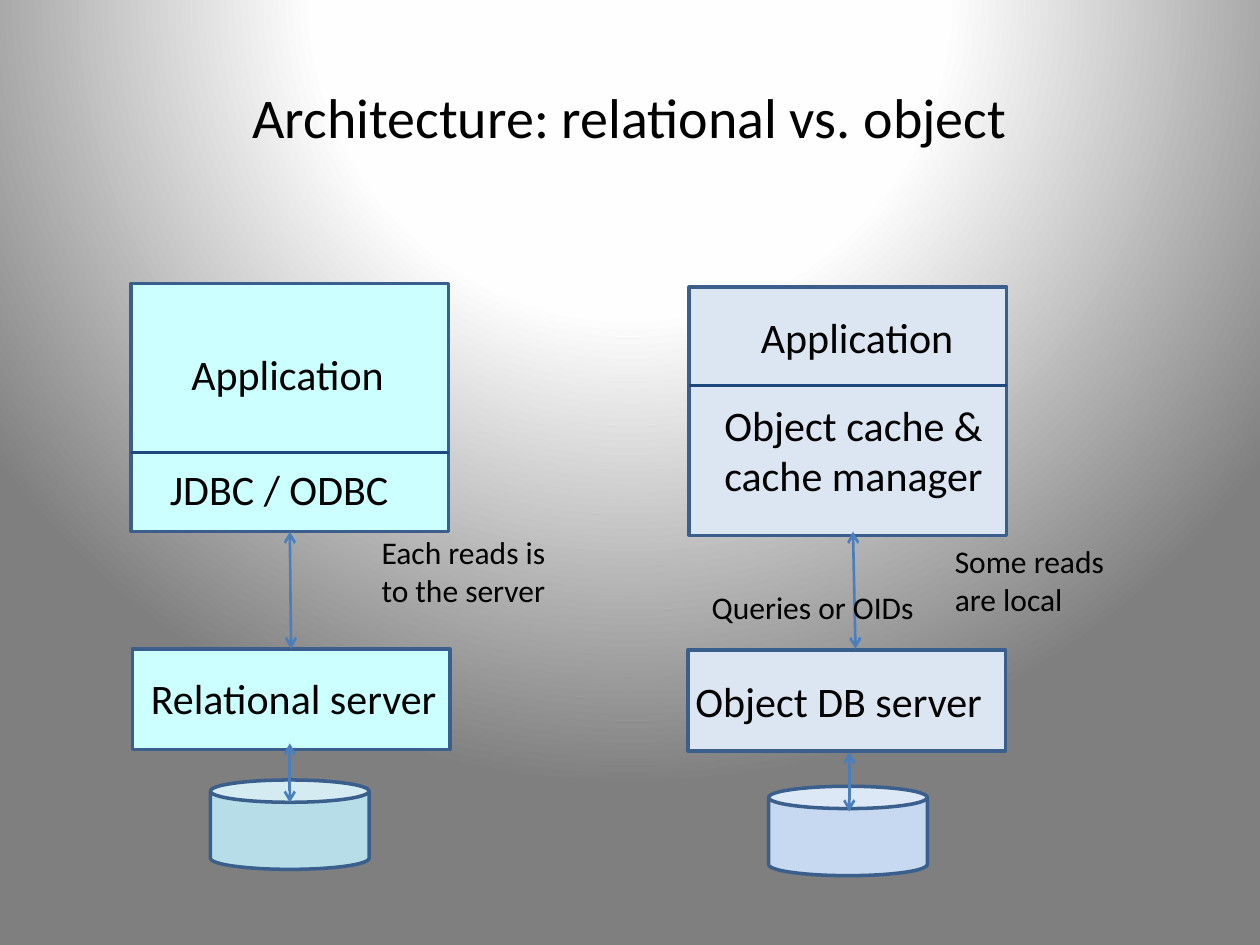
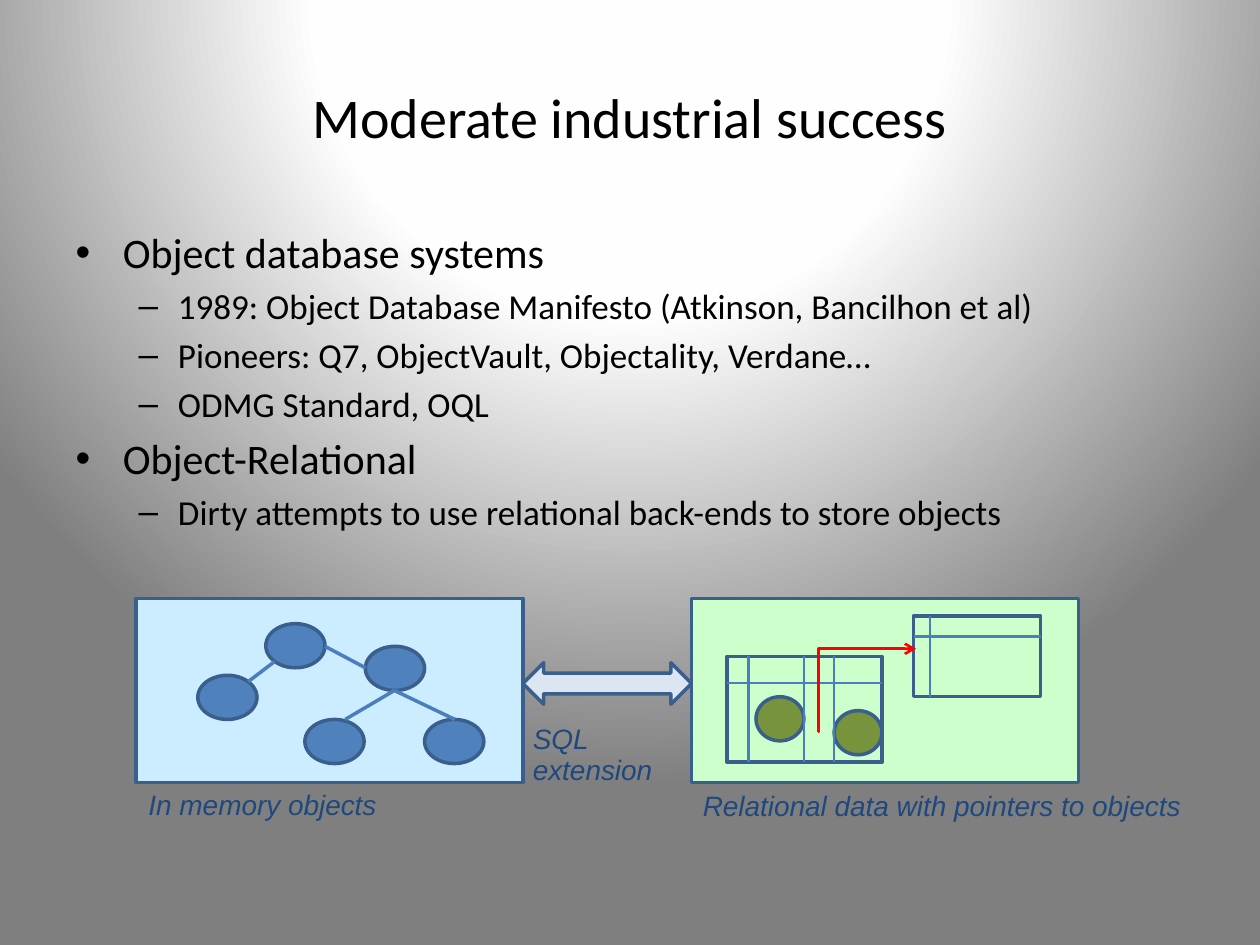
from lxml import etree
from pptx import Presentation
from pptx.dml.color import RGBColor
from pptx.enum.shapes import MSO_CONNECTOR, MSO_SHAPE
from pptx.enum.text import MSO_ANCHOR, PP_ALIGN
from pptx.oxml import parse_xml
from pptx.oxml.ns import qn
from pptx.util import Inches, Pt

RECT, OVAL, CAN = MSO_SHAPE.RECTANGLE, MSO_SHAPE.OVAL, MSO_SHAPE.CAN
DOUBLE_ARROW = MSO_SHAPE.LEFT_RIGHT_ARROW
STRAIGHT, ELBOW = MSO_CONNECTOR.STRAIGHT, MSO_CONNECTOR.ELBOW
CENTER, MIDDLE = PP_ALIGN.CENTER, MSO_ANCHOR.MIDDLE
TITLE_ONLY, TITLE_AND_BODY = 5, 1

BLACK = RGBColor(0x00, 0x00, 0x00)
NAVY = RGBColor(0x1F, 0x49, 0x7D)
OUTLINE = RGBColor(0x3A, 0x5F, 0x8C)
LINK = RGBColor(0x4B, 0x7E, 0xBC)
BLUE = RGBColor(0x4F, 0x81, 0xBD)
PALE_BLUE = RGBColor(0xDC, 0xE6, 0xF2)
CAN_BLUE = RGBColor(0xC6, 0xD9, 0xF1)
CYAN = RGBColor(0xCC, 0xFF, 0xFF)
CAN_CYAN = RGBColor(0xB7, 0xDE, 0xE8)
SKY = RGBColor(0xCC, 0xEC, 0xFF)
MINT = RGBColor(0xCC, 0xFF, 0xCC)
OLIVE = RGBColor(0x77, 0x93, 0x3C)
RED = RGBColor(0xFF, 0x00, 0x00)

BODY_SIZES = (24, 20)
NS = ('xmlns:a="http://schemas.openxmlformats.org/drawingml/2006/main" '
      'xmlns:p="http://schemas.openxmlformats.org/presentationml/2006/main"')
BACKGROUND = f"""<p:bg {NS}><p:bgPr><a:gradFill rotWithShape="1"><a:gsLst>
<a:gs pos="0"><a:srgbClr val="FFFFFF"/></a:gs>
<a:gs pos="40000"><a:srgbClr val="FEFEFE"/></a:gs>
<a:gs pos="100000"><a:srgbClr val="7F7F7F"/></a:gs></a:gsLst>
<a:path path="circle"><a:fillToRect l="50000" t="-80000" r="50000" b="180000"/></a:path>
</a:gradFill><a:effectLst/></p:bgPr></p:bg>"""


class Deck:
    def __init__(self):
        self.prs = Presentation()
        self.prs.slide_width, self.prs.slide_height = Inches(10), Inches(7.5)
        self.s = None
        c_sld = self.prs.slide_master.element.find(qn("p:cSld"))
        for old in c_sld.findall(qn("p:bg")):
            c_sld.remove(old)
        c_sld.insert(0, parse_xml(BACKGROUND))

    def slide(self, layout, title):
        """Start a slide with its title."""
        self.s = self.prs.slides.add_slide(self.prs.slide_layouts[layout])
        sp = self.s.shapes.title
        self.place(sp, 0.5, 0.3, 9, 1.25)
        sp.text_frame.text = title
        sp.text_frame.vertical_anchor = MIDDLE
        p = sp.text_frame.paragraphs[0]
        p.alignment = CENTER
        self.font(p, 32)

    @staticmethod
    def place(sp, x, y, w, h):
        sp.left, sp.top, sp.width, sp.height = map(Inches, (x, y, w, h))

    @staticmethod
    def font(p, size, color=BLACK, name="Calibri", italic=False):
        p.font.size, p.font.name, p.font.italic = Pt(size), name, italic
        p.font.color.rgb = color

    def body(self, items):
        """Fill the body placeholder from (level, text) pairs."""
        sp = self.s.placeholders[1]
        self.place(sp, 0.5, 1.75, 9, 4.95)
        tf = sp.text_frame
        tf.text = "\n".join(text for _, text in items)
        for p, (level, _) in zip(tf.paragraphs, items):
            p.level = level
            self.font(p, BODY_SIZES[level])

    def text(self, x, y, w, h, text, size=24, wrap=False):
        sp = self.s.shapes.add_textbox(*map(Inches, (x, y, w, h)))
        tf = sp.text_frame
        tf.word_wrap = wrap
        tf.text = text
        for p in tf.paragraphs:
            self.font(p, size)
        return sp

    def caption(self, x, y, w, h, text):
        sp = self.text(x, y, w, h, text)
        for p in sp.text_frame.paragraphs:
            p.line_spacing = 0.9
            self.font(p, 16, NAVY, "Arial", True)

    def shape(self, kind, x, y, w, h, fill=None):
        sp = self.s.shapes.add_shape(kind, *map(Inches, (x, y, w, h)))
        sp.shadow.inherit = False
        if fill is None:
            sp.fill.background()
        else:
            sp.fill.solid()
            sp.fill.fore_color.rgb = fill
        sp.line.color.rgb = OUTLINE
        sp.line.width = Pt(2)

    def line(self, x1, y1, x2, y2, color=LINK, width=1.5, heads=(), kind=STRAIGHT):
        """Draw a connector; heads names the arrow ends, in the order headEnd, tailEnd."""
        cn = self.s.shapes.add_connector(kind, *map(Inches, (x1, y1, x2, y2)))
        cn.line.color.rgb = color
        cn.line.width = Pt(width)
        sp_pr = cn._element.spPr
        for head in heads:
            etree.SubElement(sp_pr.find(qn("a:ln")), qn(f"a:{head}"), type="arrow")
        etree.SubElement(sp_pr, qn("a:effectLst"))
        return cn

    def double_arrow(self, *ends):
        self.line(*ends, heads=("headEnd", "tailEnd"))

    def stack(self, client, divider_y, server, disk, fill, disk_fill):
        """Client box split by a divider, above a server and a disk."""
        x, y = client
        self.shape(RECT, x, y, 2.52, 1.97, fill)
        self.line(x, divider_y, x + 2.52, divider_y, NAVY)
        self.shape(RECT, *server, 2.52, 0.8, fill)
        self.shape(CAN, *disk, 1.26, 0.71, disk_fill)

    def grid(self, x, y, w, h, header_y, columns):
        self.shape(RECT, x, y, w, h)
        self.line(x, header_y, x + w, header_y)
        for column in columns:
            self.line(column, y, column, y + h)


def architecture(deck):
    deck.slide(TITLE_ONLY, "Architecture: relational vs. object")

    deck.stack((1.04, 2.25), 3.59, (1.05, 5.15), (1.67, 6.19), CYAN, CAN_CYAN)
    deck.double_arrow(2.3, 4.22, 2.31, 5.15)
    deck.double_arrow(2.3, 5.9, 2.3, 6.37)
    deck.text(1.42, 2.72, 1.75, 0.5, "Application")
    deck.text(1.25, 3.63, 2.13, 0.5, "JDBC / ODBC", wrap=True)
    deck.text(1.1, 5.29, 2.5, 0.5, "Relational server")
    deck.text(2.93, 4.18, 1.52, 0.71, "Each reads is\nto the server", 18)

    deck.stack((5.47, 2.28), 3.06, (5.46, 5.16), (6.1, 6.24), PALE_BLUE, CAN_BLUE)
    deck.double_arrow(6.77, 4.22, 6.79, 5.15)
    deck.double_arrow(6.74, 5.97, 6.74, 6.44)
    deck.text(5.94, 2.42, 1.75, 0.5, "Application")
    deck.text(5.65, 3.12, 2.34, 0.91, "Object cache & cache manager", wrap=True)
    deck.text(5.42, 5.31, 2.5, 0.5, "Object DB server")
    deck.text(7.48, 4.25, 1.4, 0.71, "Some reads\nare local", 18)
    deck.text(5.55, 4.62, 1.82, 0.4, "Queries or OIDs", 18)


def industrial_success(deck):
    deck.slide(TITLE_AND_BODY, "Moderate industrial success")
    deck.body([
        (0, "Object database systems"),
        (1, "1989: Object Database Manifesto (Atkinson, Bancilhon et al)"),
        (1, "Pioneers: Q7, ObjectVault, Objectality, Verdane…"),
        (1, "ODMG Standard, OQL"),
        (0, "Object-Relational"),
        (1, "Dirty attempts to use relational back-ends to store objects"),
    ])

    for x, fill in ((1.08, SKY), (5.49, MINT)):
        deck.shape(RECT, x, 4.75, 3.07, 1.46, fill)
    deck.shape(DOUBLE_ARROW, 4.15, 5.26, 1.34, 0.33, PALE_BLUE)

    for x, y in ((2.11, 4.95), (2.9, 5.13), (1.57, 5.36), (2.42, 5.71), (3.37, 5.71)):
        deck.shape(OVAL, x, y, 0.47, 0.35, BLUE)
    for ends in ((2.58, 5.13, 2.9, 5.3), (2.18, 5.25, 1.97, 5.41),
                 (3.13, 5.48, 3.61, 5.71), (2.74, 5.71, 3.13, 5.48)):
        deck.line(*ends, width=2)

    for x, y in ((6, 5.53), (6.62, 5.64)):
        deck.shape(OVAL, x, y, 0.38, 0.35, OLIVE)
    deck.grid(5.77, 5.21, 1.23, 0.84, 5.42, (5.94, 6.38, 6.62))
    deck.grid(7.25, 4.89, 1.01, 0.64, 5.05, (7.38,))
    pointer = deck.line(6.49, 5.81, 7.27, 5.15, RED, heads=("tailEnd",), kind=ELBOW)
    bends = pointer._element.spPr.find(qn("a:prstGeom")).find(qn("a:avLst"))
    etree.SubElement(bends, qn("a:gd"), name="adj1", fmla="val 800")

    deck.caption(1.08, 6.23, 2.09, 0.35, "In memory objects")
    deck.caption(5.48, 6.24, 4.1, 0.35, "Relational data with pointers to objects")
    deck.caption(4.13, 5.71, 1.22, 0.59, "SQL\nextension")


def main():
    deck = Deck()
    architecture(deck)
    industrial_success(deck)
    deck.prs.save("out.pptx")


if __name__ == "__main__":
    main()
